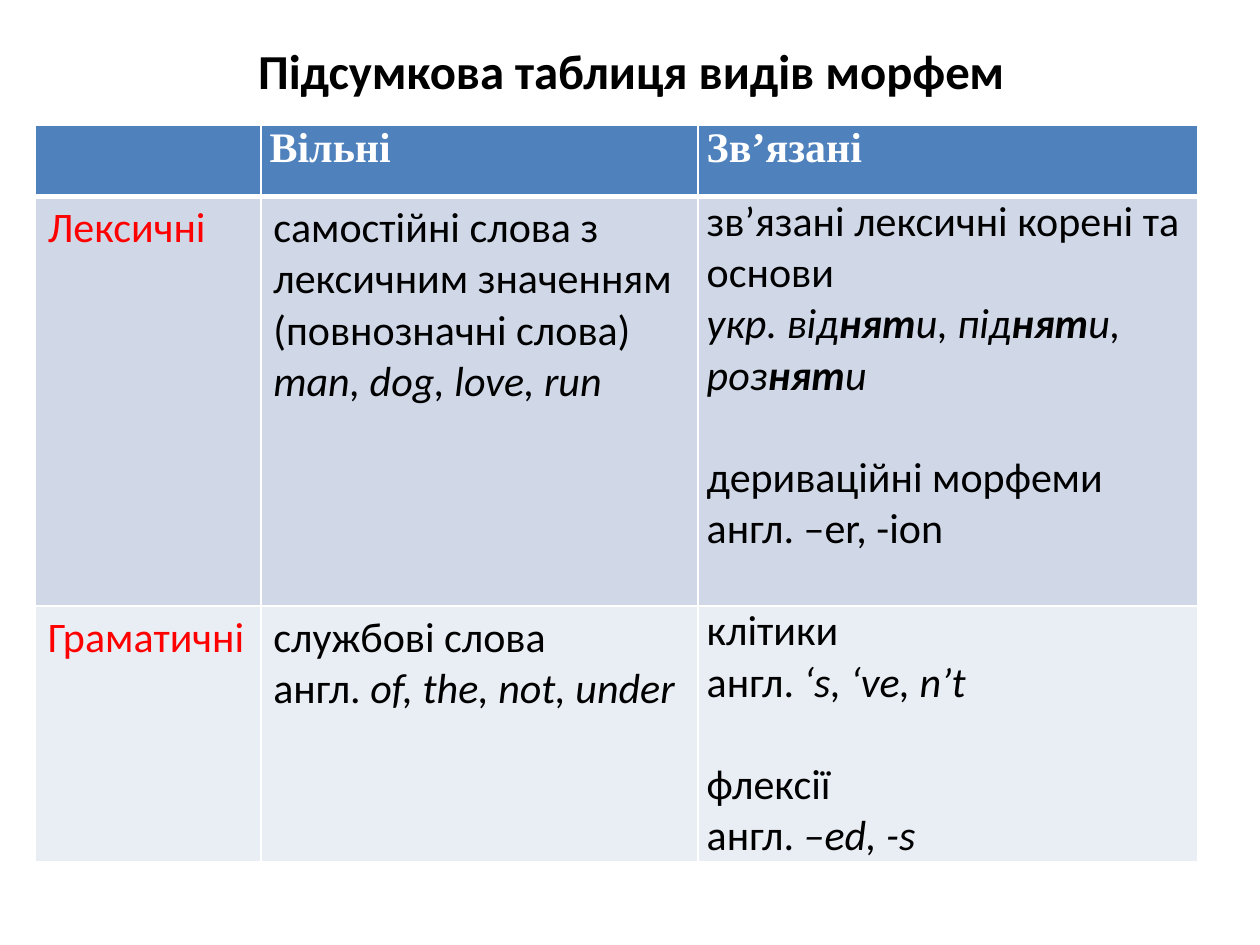
from lxml.etree import SubElement
from pptx import Presentation
from pptx.dml.color import RGBColor
from pptx.enum.text import MSO_ANCHOR, PP_ALIGN
from pptx.oxml.ns import qn
from pptx.util import Inches, Pt

COLORS = {
    "header": "4F81BD",
    "lexical": "D0D8E8",
    "grammatical": "E9EDF4",
    "white": "FFFFFF",
    "black": "000000",
    "red": "FF0000",
}


def style_run(run, size, color, font="Calibri", bold=False, italic=False):
    run.font.size = Pt(size)
    run.font.name = font
    run.font.bold = bold
    run.font.italic = italic
    run.font.color.rgb = RGBColor.from_string(COLORS[color])


def add_border(cell, side, width):
    line = SubElement(cell._tc.get_or_add_tcPr(), qn(f"a:{side}"), w=str(Pt(width)))
    fill = SubElement(line, qn("a:solidFill"))
    SubElement(fill, qn("a:srgbClr"), val=COLORS["white"])


prs = Presentation()
prs.slide_width = Inches(10)
prs.slide_height = Inches(7.5)
slide = prs.slides.add_slide(prs.slide_layouts[6])

title = slide.shapes.add_textbox(Inches(0.51), Inches(0.44), Inches(9), Inches(0.81))
heading = title.text_frame
heading.word_wrap = True
heading.vertical_anchor = MSO_ANCHOR.BOTTOM
heading.margin_top = 0
heading.margin_bottom = Inches(0.46)
heading.text = "Підсумкова таблиця видів морфем"
heading.paragraphs[0].alignment = PP_ALIGN.CENTER
style_run(heading.paragraphs[0].runs[0], 27.9, "black", bold=True)

column_widths = [1.79, 3.47, 3.97]
row_heights = [0.57, 3.25, 2.03]
row_fills = ["header", "lexical", "grammatical"]

# Each paragraph is a list of (text, style letters) pairs.
morphemes = [
    [
        [],
        [[("Вільні", "b")]],
        [[("Зв’язані", "b")]],
    ],
    [
        [[("Лексичні", "")]],
        [
            [("самостійні слова з лексичним значенням (повнозначні слова)", "")],
            [("man, dog, love, run", "i")],
        ],
        [
            [("зв’язані лексичні корені та основи", "")],
            [("укр. від", "i"), ("нят", "bi"), ("и, під", "i"), ("нят", "bi"),
             ("и, роз", "i"), ("нят", "bi"), ("и", "i")],
            [("дериваційні морфеми", "")],
            [("англ. –er, -ion", "")],
        ],
    ],
    [
        [[("Граматичні", "")]],
        [
            [("службові слова", "")],
            [("англ. ", ""), ("of, the, not, under", "i")],
        ],
        [
            [("клітики", "")],
            [("англ. ", ""), ("‘s, ‘ve, n’t", "i")],
            [("флексії", "")],
            [("англ. ", ""), ("–ed, -s", "i")],
        ],
    ],
]

table = slide.shapes.add_table(
    3, 3, Inches(0.28), Inches(0.99), Inches(sum(column_widths)), Inches(sum(row_heights))
).table
for column, width in zip(table.columns, column_widths):
    column.width = Inches(width)
for row, height in zip(table.rows, row_heights):
    row.height = Inches(height)

for r, contents in enumerate(morphemes):
    for c, paragraphs in enumerate(contents):
        cell = table.cell(r, c)
        if c == 2 or (r == 0 and c == 1):
            cell.margin_left = cell.margin_right = Inches(0.07)
            cell.margin_top = cell.margin_bottom = 0
        for side in ("lnL", "lnR", "lnT", "lnB"):
            header_rule = (r, side) in ((0, "lnB"), (1, "lnT"))
            add_border(cell, side, 3 if header_rule else 1)
        cell.fill.solid()
        cell.fill.fore_color.rgb = RGBColor.from_string(COLORS[row_fills[r]])

        color = "white" if r == 0 else "red" if c == 0 else "black"
        font = "Times New Roman" if r == 0 else "Calibri"
        for index, segments in enumerate(paragraphs):
            frame = cell.text_frame
            paragraph = frame.paragraphs[0] if index == 0 else frame.add_paragraph()
            if index == 2:
                paragraph.space_before = Pt(29.3)
            for text, style in segments:
                run = paragraph.add_run()
                run.text = text
                style_run(run, 24, color, font, "b" in style, "i" in style)

prs.save("out.pptx")
